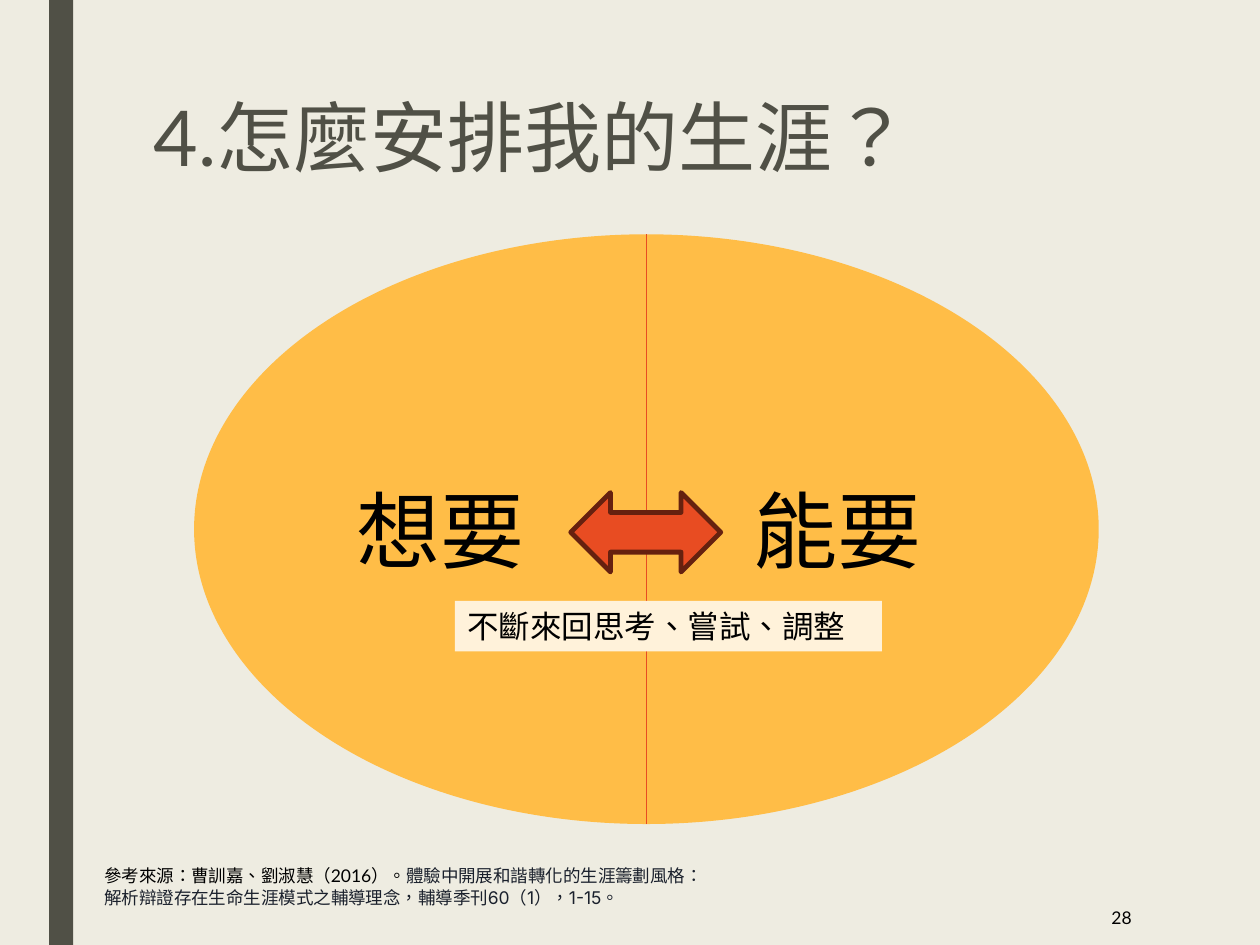
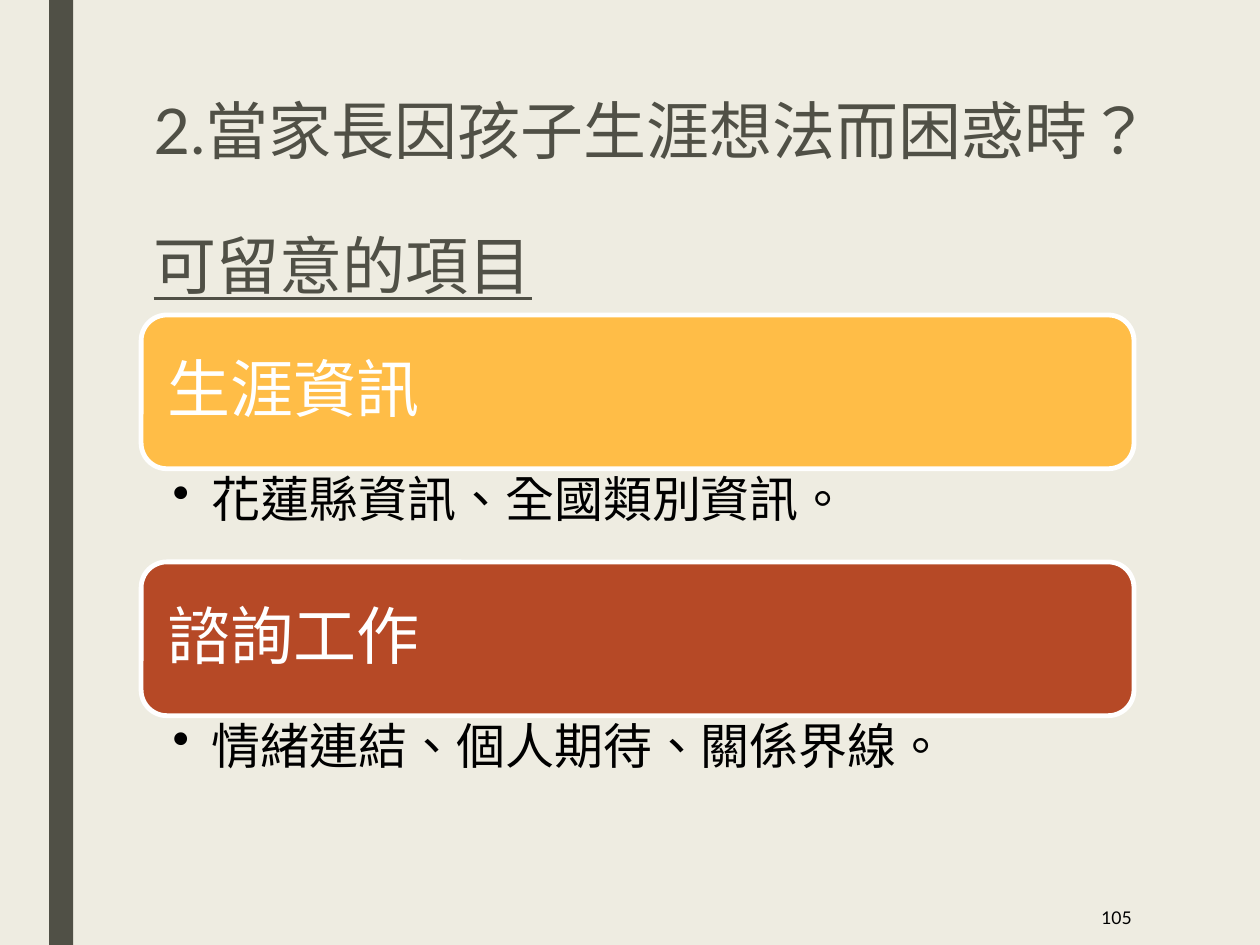
from dataclasses import dataclass

import pptx
import pptx.dml.color
import pptx.enum.lang
import pptx.enum.shapes
import pptx.enum.text
import pptx.oxml
import pptx.oxml.ns
import pptx.util
from pptx.util import Inches

COLOURS = {
    "paper": "EEECE1",
    "olive": "505046",
    "amber": "FFBD47",
    "cream": "FFF2DA",
    "red": "E84C22",
    "maroon": "66210F",
    "rust": "B64926",
    "white": "FFFFFF",
    "black": "000000",
    "ink": "1A202C",
}
FONT = "Lato"
TITLE_ONLY = 5
SHAPES = pptx.enum.shapes.MSO_SHAPE
ANCHORS = pptx.enum.text.MSO_ANCHOR
ALIGN = pptx.enum.text.PP_ALIGN
CARD_LEFT, CARD_WIDTH = 1.12, 7.88
BAR_HEIGHT, DETAIL_HEIGHT, BAR_INSET = 1.22, 0.73, 0.06
FIRST_BAR_TOP, BAR_STEP = 2.5, 1.96


@dataclass(frozen=True)
class Area:
    left: float
    top: float
    width: float
    height: float

    def lengths(self) -> tuple:
        return tuple(Inches(side) for side in (self.left, self.top, self.width, self.height))


@dataclass(frozen=True)
class Topic:
    heading: str
    detail: str
    colour: str


TOPICS = [
    Topic("生涯資訊", "花蓮縣資訊、全國類別資訊。", "amber"),
    Topic("諮詢工作", "情緒連結、個人期待、關係界線。", "rust"),
]


def rgb(name: str) -> pptx.dml.color.RGBColor:
    return pptx.dml.color.RGBColor.from_string(COLOURS[name])


def style_span(span, size: float, colour: str, font: str = FONT) -> None:
    span.font.name = font
    span.font.size = pptx.util.Pt(size)
    span.font.color.rgb = rgb(colour)
    span.font.language_id = pptx.enum.lang.MSO_LANGUAGE_ID.TRADITIONAL_CHINESE


def write(box, text: str, size: float, colour: str = "black",
          anchor=ANCHORS.TOP, insets: tuple = (0.1, 0.05, 0.1, 0.05)):
    frame = box.text_frame
    frame.text = text
    frame.word_wrap = True
    frame.vertical_anchor = anchor
    frame.margin_left, frame.margin_top, frame.margin_right, frame.margin_bottom = map(Inches, insets)
    para = frame.paragraphs[0]
    para.alignment = ALIGN.LEFT
    for span in para.runs:
        style_span(span, size, colour)
    return para


def add_text(page, area: Area, text: str, size: float, **options):
    return write(page.shapes.add_textbox(*area.lengths()), text, size, **options)


def add_figure(page, kind, area: Area, fill: str, line: str | None = None):
    figure = page.shapes.add_shape(kind, *area.lengths())
    figure.shadow.inherit = False
    figure.fill.solid()
    figure.fill.fore_color.rgb = rgb(fill)
    if line:
        figure.line.color.rgb = rgb(line)
        figure.line.width = pptx.util.Pt(2.75)
    else:
        figure.line.fill.background()
    return figure


def add_page(deck, title: str, title_size: int, number: int):
    page = deck.slides.add_slide(deck.slide_layouts[TITLE_ONLY])
    add_figure(page, SHAPES.RECTANGLE, Area(0.39, 0, 0.19, 7.5), "olive")
    heading = page.shapes.title
    heading.left, heading.top, heading.width, heading.height = Area(1.12, 0.75, 7.88, 1.62).lengths()
    para = write(heading, title, title_size, "olive")
    para.line_spacing = 0.89
    heading.text_frame.auto_size = pptx.enum.text.MSO_AUTO_SIZE.NONE
    for line_break in para._p.findall(pptx.oxml.ns.qn("a:br")):
        pptx.oxml.ns.qn("a:rPr")
        properties = line_break.makeelement(pptx.oxml.ns.qn("a:rPr"), {"sz": str(title_size * 100)})
        line_break.append(properties)
    footer = add_text(page, Area(7.77, 7.06, 1.31, 0.44), str(number), 10, anchor=ANCHORS.MIDDLE)
    footer.alignment = ALIGN.RIGHT
    return page


def add_divider(page, x: float, top: float, bottom: float) -> None:
    divider = page.shapes.add_connector(
        pptx.enum.shapes.MSO_CONNECTOR.STRAIGHT, Inches(x), Inches(top), Inches(x), Inches(bottom))
    divider.line.color.rgb = rgb("red")
    divider.line.width = pptx.util.Pt(0.5)
    properties = divider._element.spPr
    properties.append(properties.makeelement(pptx.oxml.ns.qn("a:effectLst"), {}))


def add_bullet(para, indent: float) -> None:
    properties = para._p.get_or_add_pPr()
    properties.set("marL", str(Inches(indent)))
    properties.set("indent", str(-Inches(indent)))
    bullet = properties.makeelement(pptx.oxml.ns.qn("a:buChar"), {"char": "•"})
    properties.append(bullet)


def add_topic(page, topic: Topic, top: float) -> None:
    bar = Area(CARD_LEFT, top, CARD_WIDTH, BAR_HEIGHT)
    add_figure(page, SHAPES.ROUNDED_RECTANGLE, bar, topic.colour, "white")
    inner = Area(CARD_LEFT + BAR_INSET, top + BAR_INSET,
                 CARD_WIDTH - 2 * BAR_INSET, BAR_HEIGHT - 2 * BAR_INSET)
    heading = add_text(page, inner, topic.heading, 36, colour="white",
                       anchor=ANCHORS.MIDDLE, insets=(0.15,) * 4)
    heading.line_spacing = 0.9
    detail = add_text(page, Area(CARD_LEFT, top + BAR_HEIGHT, CARD_WIDTH, DETAIL_HEIGHT),
                      topic.detail, 28, insets=(0.25, 0.05, 0.28, 0.05))
    add_bullet(detail, 0.31)
    detail.line_spacing = 0.9


def build_balance_page(deck) -> None:
    page = add_page(deck, "4.怎麼安排我的生涯？", 44, 28)
    oval = Area(1.54, 1.86, 7.18, 4.68)
    add_figure(page, SHAPES.OVAL, oval, "amber")
    add_divider(page, oval.left + oval.width / 2, oval.top, oval.top + oval.height)
    for left, label in ((2.73, "想要"), (5.88, "能要")):
        add_text(page, Area(left, 3.75, 1.83, 0.91), label, 48)
    add_figure(page, SHAPES.LEFT_RIGHT_ARROW, Area(4.53, 3.91, 1.19, 0.63), "red", "maroon")
    caption = add_figure(page, SHAPES.RECTANGLE, Area(3.61, 4.77, 3.39, 0.4), "cream")
    write(caption, "不斷來回思考、嘗試、調整", 18)
    source = add_text(page, Area(0.73, 6.82, 5, 0.44), "參考來源：曹訓嘉、劉淑慧（2016）。", 10)
    work = source.add_run()
    work.text = "體驗中開展和諧轉化的生涯籌劃風格：解析辯證存在生命生涯模式之輔導理念，輔導季刊60（1），1-15。"
    style_span(work, 10, "ink", "Inter")


def build_topics_page(deck) -> None:
    page = add_page(deck, "2.當家長因孩子生涯想法而困惑時？\v可留意的項目", 36, 105)
    page.shapes.title.text_frame.paragraphs[0].runs[-1].font.underline = True
    for index, topic in enumerate(TOPICS):
        add_topic(page, topic, FIRST_BAR_TOP + index * BAR_STEP)


def main() -> None:
    deck = pptx.Presentation()
    deck.slide_width, deck.slide_height = Inches(10), Inches(7.5)
    background = deck.slide_master.background.fill
    background.solid()
    background.fore_color.rgb = rgb("paper")
    build_balance_page(deck)
    build_topics_page(deck)
    deck.save("out.pptx")


if __name__ == "__main__":
    main()
